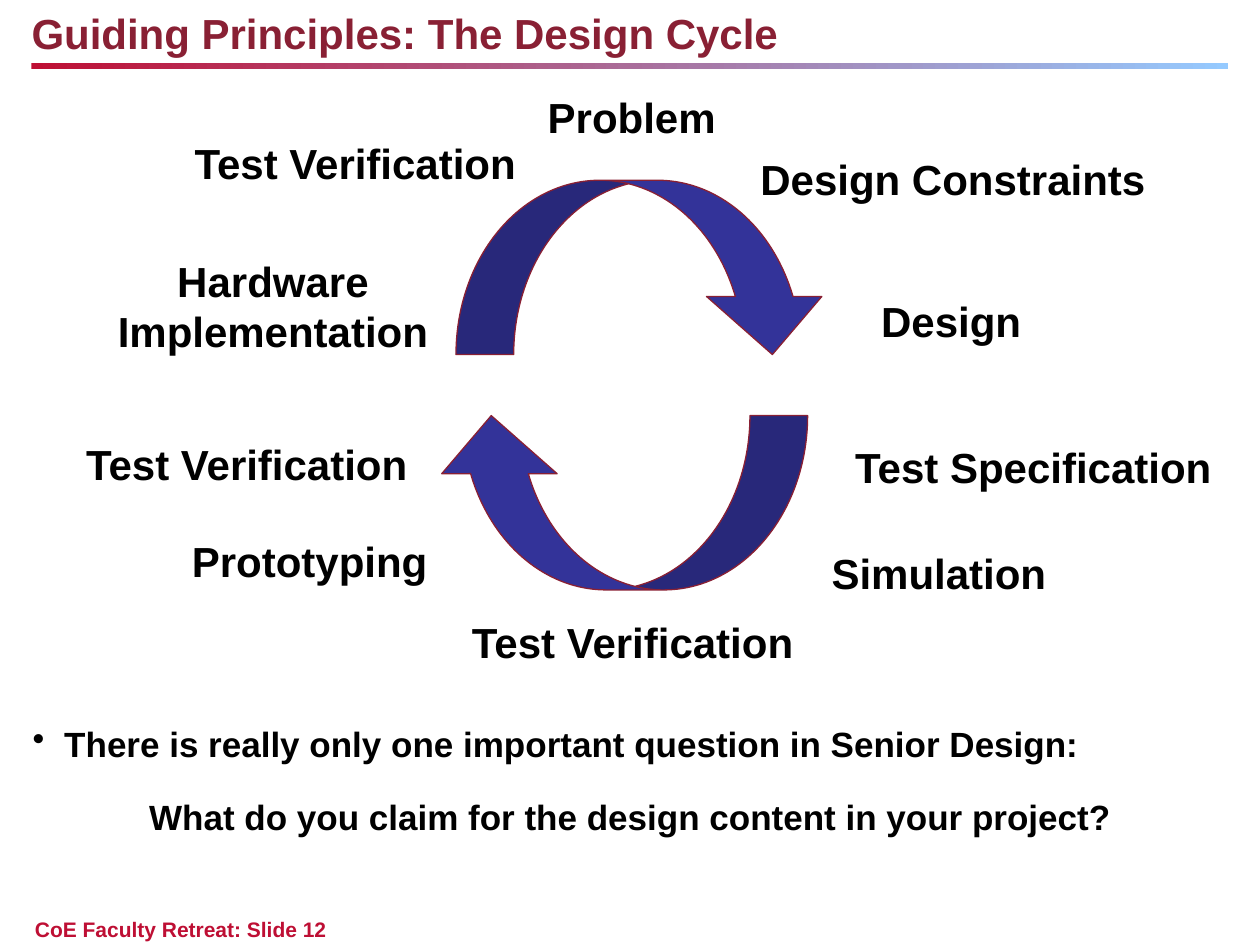
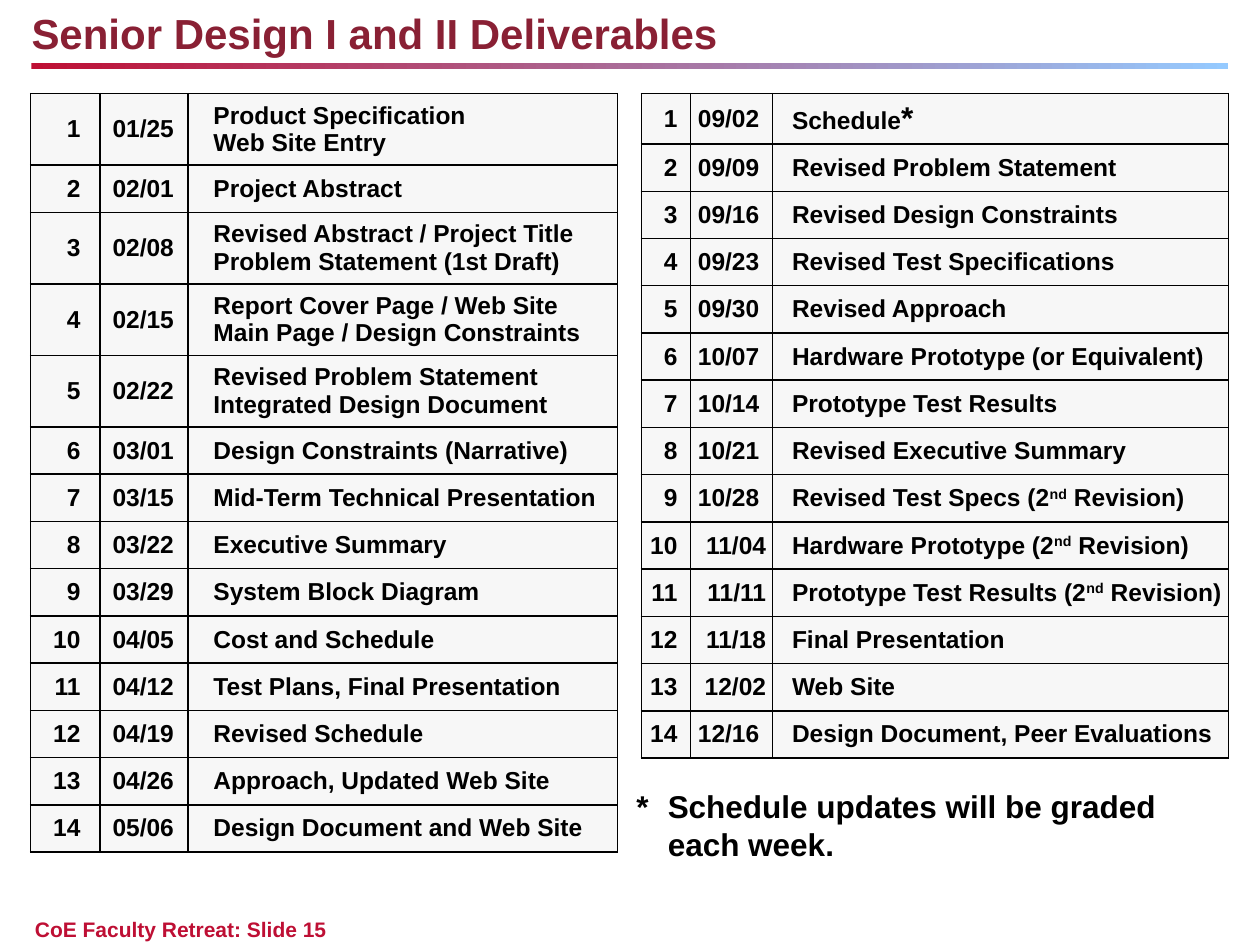
from lxml.etree import SubElement
from pptx import Presentation
from pptx.dml.color import RGBColor
from pptx.enum.shapes import MSO_SHAPE as Preset
from pptx.enum.text import MSO_ANCHOR as Anchor, PP_ALIGN as Align
from pptx.oxml import parse_xml
from pptx.oxml.ns import nsdecls, qn
from pptx.util import Pt

COLORS = {
    "title": "892034", "crimson": "BE0F34", "sky": "95CAFF",
    "arrow": "333399", "ink": "000000", "cell": "F7F7F7",
}
FONT = "Arial"
NO_INSETS = {f"margin_{side}": 0 for side in ("left", "right", "top", "bottom")}

CYCLE_LABELS = [
    ("Problem", 263, 0.5, 130),
    ("Design Constraints", 400, 36, 223),
    ("Test Specification", 444, 200, 227),
    ("Design", 456, 117, 109),
    ("Simulation", 425.5, 261, 156),
    ("Test Verification", 220.5, 300, 216),
    ("Prototyping", 36, 254, 216),
    ("Test Verification", 0, 198.5, 216),
    ("Hardware Implementation", 15, 94, 216),
    ("Test Verification", 62, 26.5, 216),
]
SPRING = [
    ("01/25", "Product Specification\nWeb Site Entry"),
    ("02/01", "Project Abstract"),
    ("02/08", "Revised Abstract / Project Title\nProblem Statement (1st Draft)"),
    ("02/15", "Report Cover Page / Web Site\nMain Page / Design Constraints"),
    ("02/22", "Revised Problem Statement\nIntegrated Design Document"),
    ("03/01", "Design Constraints (Narrative)"),
    ("03/15", "Mid-Term Technical Presentation"),
    ("03/22", "Executive Summary"),
    ("03/29", "System Block Diagram"),
    ("04/05", "Cost and Schedule"),
    ("04/12", "Test Plans, Final Presentation"),
    ("04/19", "Revised Schedule"),
    ("04/26", "Approach, Updated Web Site"),
    ("05/06", "Design Document and Web Site"),
]
FALL = [
    ("09/02", "Schedule*"),
    ("09/09", "Revised Problem Statement"),
    ("09/16", "Revised Design Constraints"),
    ("09/23", "Revised Test Specifications"),
    ("09/30", "Revised Approach"),
    ("10/07", "Hardware Prototype (or Equivalent)"),
    ("10/14", "Prototype Test Results"),
    ("10/21", "Revised Executive Summary"),
    ("10/28", "Revised Test Specs (2^nd^ Revision)"),
    ("11/04", "Hardware Prototype (2^nd^ Revision)"),
    ("11/11", "Prototype Test Results (2^nd^ Revision)"),
    ("11/18", "Final Presentation"),
    ("12/02", "Web Site"),
    ("12/16", "Design Document, Peer Evaluations"),
]
FLUSH_DATES = {"11/04", "11/11", "11/18", "12/02"}
SPRING_STYLE = {"widths": (39.6, 50.4, 245.5), "num_right": 11.1, "date_left": 7.2,
                "date_align": Align.LEFT, "item_left": 14.5}
FALL_STYLE = {"widths": (28.1, 46.8, 260.6), "num_right": 7.5, "date_left": 3.6,
              "date_align": Align.RIGHT, "item_left": 11.2}


def rgb(name):
    """Look up a palette colour."""
    return RGBColor.from_string(COLORS[name])


def apply(target, values):
    """Set each named attribute on the target."""
    for name, value in values.items():
        setattr(target, name, value)


def add_run(paragraph, words, size, color="ink"):
    """Append a bold run."""
    run = paragraph.add_run()
    run.text = words
    apply(run.font, {"name": FONT, "size": Pt(size), "bold": True})
    run.font.color.rgb = rgb(color)
    return run


def add_text(slide, box, lines, size, color="ink", **layout):
    """Place a wrapped text frame and return its paragraphs."""
    frame = slide.shapes.add_textbox(*map(Pt, box)).text_frame
    apply(frame, {"word_wrap": True, **NO_INSETS})
    for index, line in enumerate(lines):
        paragraph = frame.add_paragraph() if index else frame.paragraphs[0]
        apply(paragraph, {"space_before": Pt(size / 10), **layout})
        add_run(paragraph, line, size, color)
    return frame.paragraphs


def hang(paragraph, indent, bullet=None):
    """Give a paragraph a hanging indent and an optional bullet."""
    props = paragraph._p.get_or_add_pPr()
    props.set("marL", str(Pt(indent)))
    props.set("indent", str(-Pt(indent)))
    if bullet:
        SubElement(props, qn("a:buChar")).set("char", bullet)


def add_frame(slide, title, number):
    """Draw the title, gradient rule and footer."""
    rule = slide.shapes.add_shape(Preset.RECTANGLE, *map(Pt, (18, 36, 684, 3.4)))
    rule.shadow.inherit = False
    rule.line.fill.background()
    rule.fill.gradient()
    rule.fill.gradient_angle = 0
    for stop, color, position in zip(rule.fill.gradient_stops, ("crimson", "sky"), (0, 1)):
        stop.color.rgb = rgb(color)
        stop.position = position
    add_text(slide, (20, 523.5, 642, 14), [f"CoE Faculty Retreat: Slide {number}"], 12, "crimson")
    add_text(slide, (18, 4.3, 682.5, 29), [title], 24, "title")


def add_cycle(slide, box):
    """Draw the two turning arrows and the labels around them."""
    left, top = box
    for x, y, turn in ((227.6, 51, 0), (214.7, 185.5, 180)):
        arrow = slide.shapes.add_shape(
            Preset.CURVED_DOWN_ARROW, *map(Pt, (left + x, top + y, 213.8, 99.6)))
        arrow.shadow.inherit = False
        arrow.rotation = turn
        for index, ratio in enumerate((0.331, 0.662, 0.333)):
            arrow.adjustments[index] = ratio
        arrow.fill.solid()
        arrow.fill.fore_color.rgb = rgb("arrow")
        arrow.line.color.rgb = rgb("title")
        arrow.line.width = Pt(0.75)
    for label, x, y, width in CYCLE_LABELS:
        add_text(slide, (left + x, top + y, width, 32), [label], 24, alignment=Align.CENTER)


def add_question(slide, box):
    """Write the bulleted statement and the centred question."""
    statement, question = add_text(
        slide, box,
        ["There is really only one important question in Senior Design:",
         "What do you claim for the design content in your project?"],
        20, space_before=Pt(0), space_after=Pt(12), line_spacing=1.25)
    hang(statement, 18, "•")
    question.alignment = Align.CENTER


def style_cell(cell):
    """Fill a cell and outline it on all sides."""
    cell.fill.solid()
    cell.fill.fore_color.rgb = rgb("cell")
    props = cell._tc.get_or_add_tcPr()
    for index, side in enumerate("LRTB"):
        props.insert(index, parse_xml(
            f'<a:ln{side} {nsdecls("a")} w="{Pt(1)}"><a:solidFill>'
            f'<a:srgbClr val="{COLORS["ink"]}"/></a:solidFill></a:ln{side}>'))


def write_item(paragraph, words):
    """Write an item with its raised ordinals and larger asterisk."""
    for index, part in enumerate(words.rstrip("*").split("^")):
        run = add_run(paragraph, part, 14)
        if index % 2:
            run._r.get_or_add_rPr().set("baseline", "30000")
    if words.endswith("*"):
        add_run(paragraph, "*", 18)


def row_height(item):
    """Return the height that an item needs."""
    return 40.9 if "\n" in item else 28.6 if "*" in item else 27


def add_schedule(slide, box, entries, style):
    """Build a table of numbered, dated deliverables."""
    heights = [row_height(item) for _, item in entries]
    table = slide.shapes.add_table(
        len(entries), 3, *map(Pt, (*box, sum(style["widths"]), sum(heights)))).table
    apply(table, {"first_row": False, "horz_banding": False})
    for column, width in zip(table.columns, style["widths"]):
        column.width = Pt(width)
    for number, (row, height, (date, item)) in enumerate(zip(table.rows, heights, entries), 1):
        row.height = Pt(height)
        date_right = 3.6 if date in FLUSH_DATES or style is SPRING_STYLE else 7.5
        columns = (
            (str(number), Align.RIGHT, 3.6, style["num_right"]),
            (date, style["date_align"], style["date_left"], date_right),
            (item, Align.LEFT, style["item_left"], 2),
        )
        for cell, (words, align, left, right) in zip(row.cells, columns):
            apply(cell, {"vertical_anchor": Anchor.MIDDLE, "margin_left": Pt(left),
                         "margin_right": Pt(right), "margin_top": Pt(3.6),
                         "margin_bottom": Pt(3.6)})
            style_cell(cell)
            for index, line in enumerate(words.split("\n")):
                frame = cell.text_frame
                paragraph = frame.add_paragraph() if index else frame.paragraphs[0]
                paragraph.alignment = align
                write_item(paragraph, line)


def add_footnote(slide, box):
    """Explain the asterisk below the fall table."""
    note, = add_text(slide, box, ["*\tSchedule updates will be graded each week."], 18)
    hang(note, 18)


def main():
    """Build both slides and save them."""
    deck = Presentation()
    apply(deck, {"slide_width": Pt(720), "slide_height": Pt(540)})
    blank = deck.slide_layouts[6]

    cycle = deck.slides.add_slide(blank)
    add_frame(cycle, "Guiding Principles: The Design Cycle", 12)
    add_cycle(cycle, (33, 52))
    add_question(cycle, (18.7, 406.8, 683, 73))

    deliverables = deck.slides.add_slide(blank)
    add_frame(deliverables, "Senior Design I and II Deliverables", 15)
    add_schedule(deliverables, (17.5, 53.5), SPRING, SPRING_STYLE)
    add_schedule(deliverables, (366.5, 53.5), FALL, FALL_STYLE)
    add_footnote(deliverables, (363.6, 450, 335, 44))

    deck.save("out.pptx")


if __name__ == "__main__":
    main()
